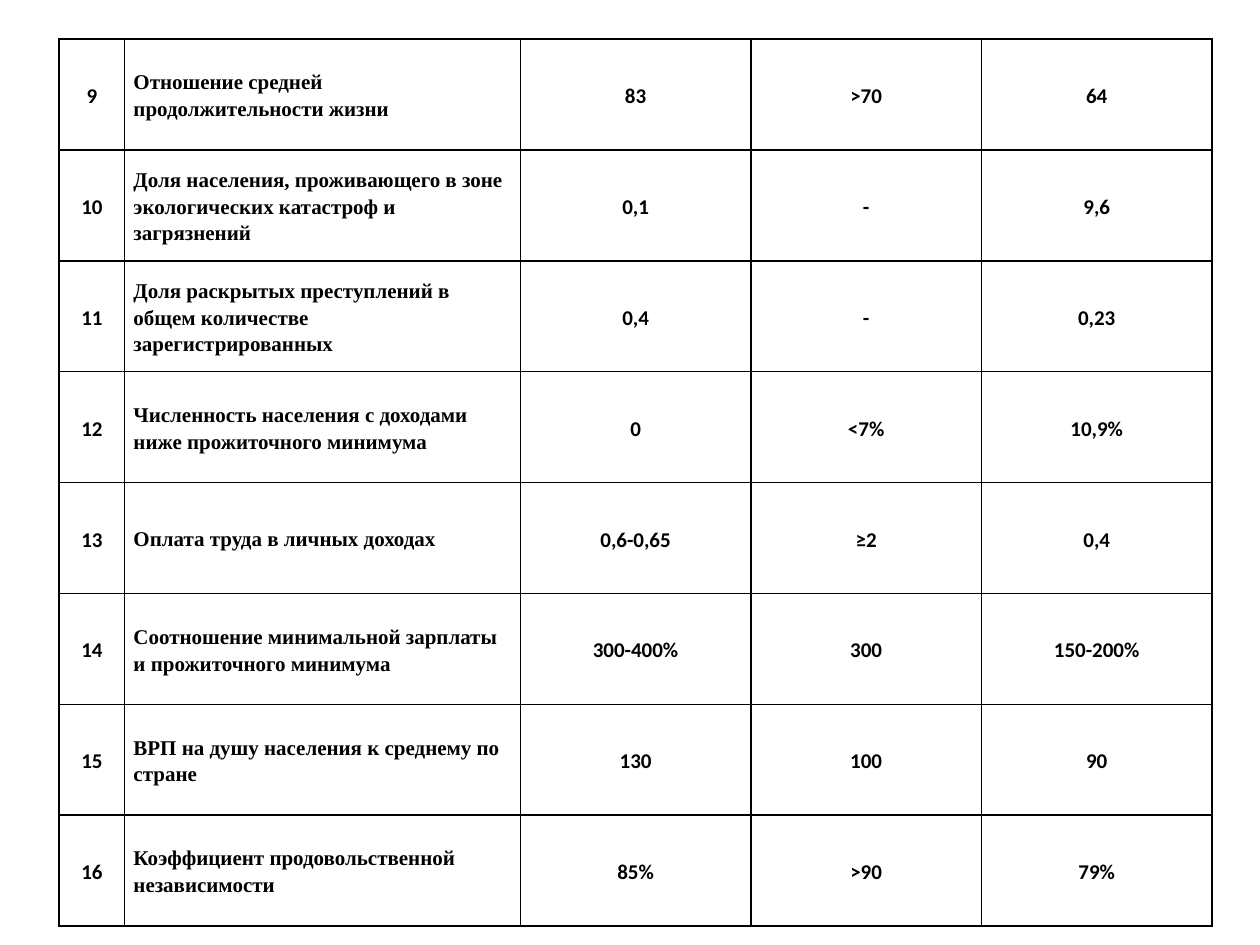
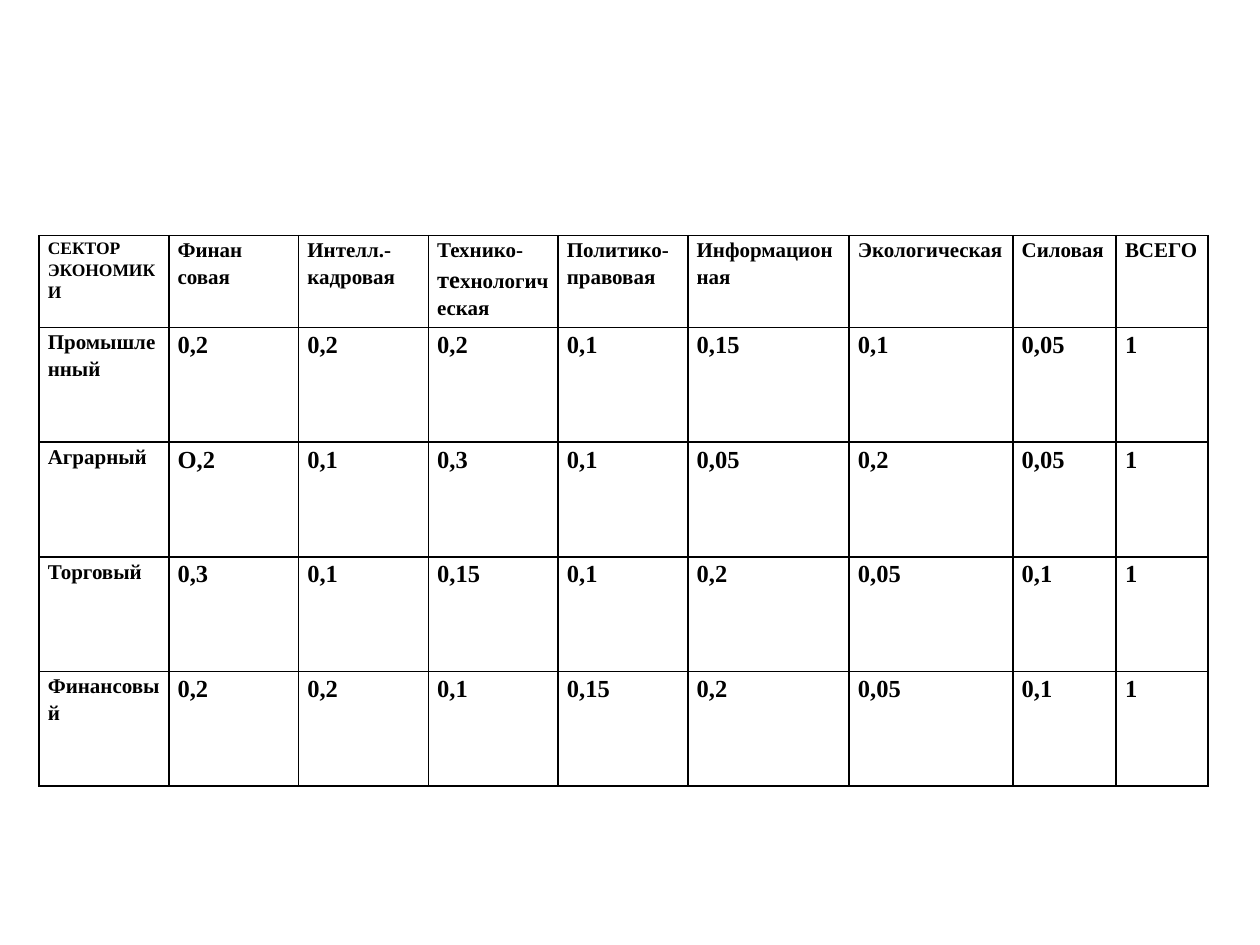
from lxml.etree import SubElement
from pptx import Presentation
from pptx.dml.color import RGBColor
from pptx.enum.text import MSO_ANCHOR, PP_ALIGN
from pptx.oxml.ns import qn
from pptx.util import Inches, Pt

BLACK = RGBColor(0x00, 0x00, 0x00)
SERIF = "Times New Roman"
SANS = "Calibri"

INDICATORS = [
    ("9", "Отношение средней продолжительности жизни", "83", ">70", "64"),
    ("10", "Доля населения, проживающего в зоне экологических катастроф и загрязнений",
     "0,1", "-", "9,6"),
    ("11", "Доля раскрытых преступлений в общем количестве зарегистрированных",
     "0,4", "-", "0,23"),
    ("12", "Численность населения с доходами ниже прожиточного минимума",
     "0", "<7%", "10,9%"),
    ("13", "Оплата труда в личных доходах", "0,6-0,65", "≥2", "0,4"),
    ("14", "Соотношение минимальной зарплаты и прожиточного минимума",
     "300-400%", "300", "150-200%"),
    ("15", "ВРП на душу населения к среднему по стране", "130", "100", "90"),
    ("16", "Коэффициент продовольственной независимости", "85%", ">90", "79%"),
]

SECTORS = [
    ("СЕКТОР\nЭКОНОМИКИ", "Финан\nсовая", "Интелл.-\nкадровая",
     "Технико-\nтехнологическая", "Политико-правовая", "Информационная",
     "Экологическая", "Силовая", "ВСЕГО"),
    ("Промышленный", "0,2", "0,2", "0,2", "0,1", "0,15", "0,1", "0,05", "1"),
    ("Аграрный", "О,2", "0,1", "0,3", "0,1", "0,05", "0,2", "0,05", "1"),
    ("Торговый", "0,3", "0,1", "0,15", "0,1", "0,2", "0,05", "0,1", "1"),
    ("Финансовый", "0,2", "0,2", "0,1", "0,15", "0,2", "0,05", "0,1", "1"),
]


class Deck:
    def __init__(self):
        self.prs = Presentation()
        self.prs.slide_width = Inches(10)
        self.prs.slide_height = Inches(7.5)
        self.slide = None

    def add_slide(self):
        self.slide = self.prs.slides.add_slide(self.prs.slide_layouts[6])

    def add_table(self, left, top, widths, heights, rows, anchor, cell_style):
        frame = self.slide.shapes.add_table(
            len(rows), len(widths), Inches(left), Inches(top),
            Inches(sum(widths)), Inches(sum(heights)))
        table = frame.table
        table.first_row = table.horz_banding = False
        for column, width in zip(table.columns, widths):
            column.width = Inches(width)
        for row, height in zip(table.rows, heights):
            row.height = Inches(height)
        for i, texts in enumerate(rows):
            for j, text in enumerate(texts):
                cell = table.cell(i, j)
                self.format_cell(cell, anchor)
                self.set_text(cell.text_frame, text, *cell_style(i, j))
        return table

    def format_cell(self, cell, anchor):
        cell.margin_left = cell.margin_right = Inches(0.07)
        cell.margin_top = cell.margin_bottom = 0
        cell.vertical_anchor = anchor
        tc_pr = cell._tc.get_or_add_tcPr()
        for side in ("a:lnL", "a:lnR", "a:lnT", "a:lnB"):
            line = SubElement(tc_pr, qn(side), w=str(Pt(1)))
            fill = SubElement(line, qn("a:solidFill"))
            SubElement(fill, qn("a:srgbClr"), val=str(BLACK))
        cell.fill.background()

    def set_text(self, tf, text, font, size, align):
        tf.text = text
        for p in tf.paragraphs:
            p.alignment = align
            p.line_spacing = 1.15
            p.font.name = font
            p.font.size = Pt(size)
            p.font.bold = True
            p.font.color.rgb = BLACK


def indicator_style(row, col):
    if col == 1:
        return SERIF, 12, PP_ALIGN.LEFT
    return SANS, 12, PP_ALIGN.CENTER


def sector_style(row, col):
    if row == col == 0:
        size = 10
    elif row == 0 or col == 0:
        size = 12
    else:
        size = 14
    return SERIF, size, PP_ALIGN.JUSTIFY


def add_indicators(deck):
    deck.add_slide()
    deck.add_table(0.47, 0.31, [0.52, 3.14] + [1.83] * 3, [0.88] * len(INDICATORS),
                   INDICATORS, MSO_ANCHOR.MIDDLE, indicator_style)


def add_sectors(deck):
    deck.add_slide()
    table = deck.add_table(0.31, 1.87, [1.03] * 5 + [1.28, 1.3, 0.82, 0.73],
                           [0.73] + [0.91] * 4, SECTORS, MSO_ANCHOR.TOP, sector_style)
    p = table.cell(0, 3).text_frame.paragraphs[1]
    r = p.runs[0]
    r.text = "те"
    r.font.size = Pt(14)
    p.add_run().text = "хнологическая"


def main():
    deck = Deck()
    add_indicators(deck)
    add_sectors(deck)
    deck.prs.save("out.pptx")


if __name__ == "__main__":
    main()
